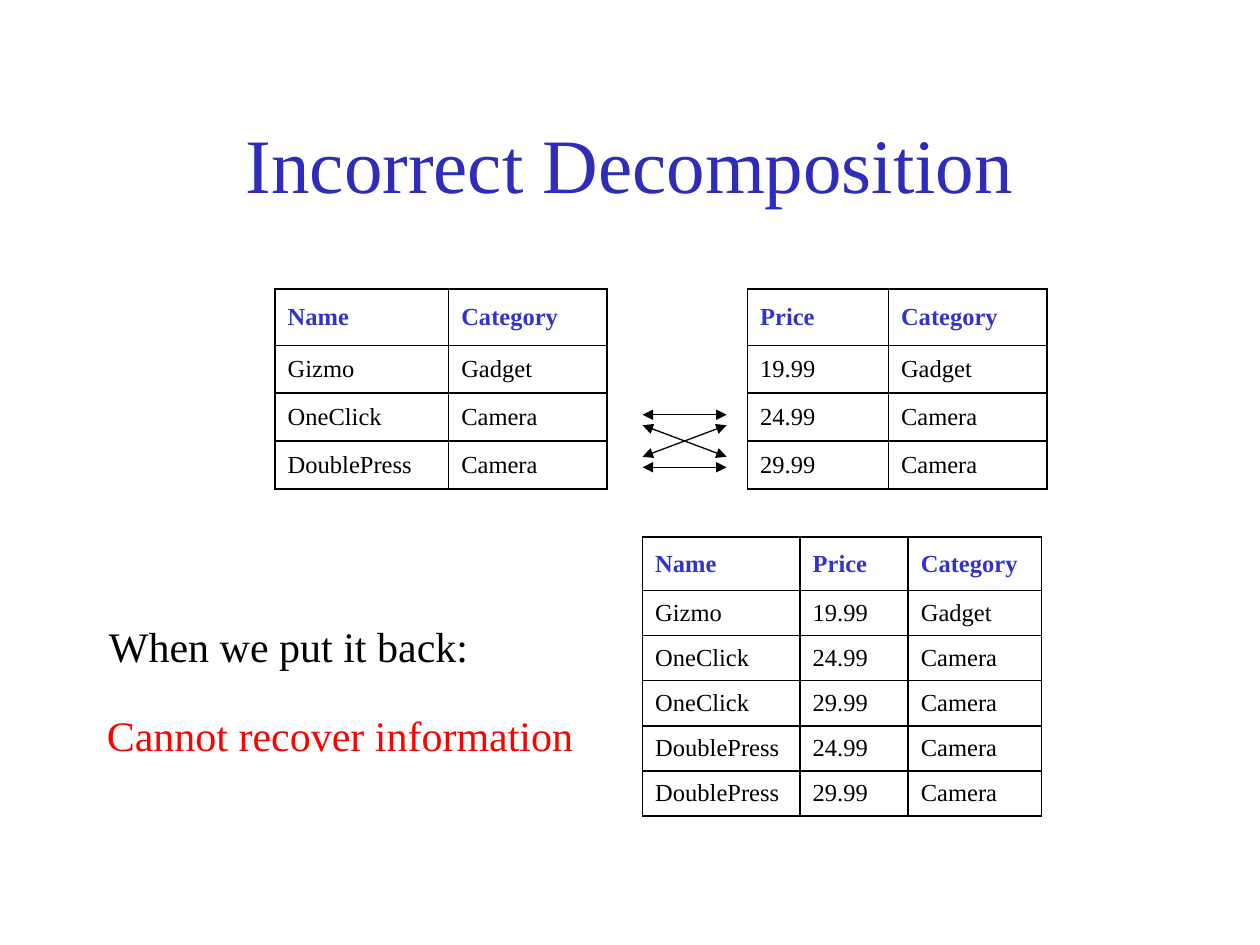
from dataclasses import dataclass

from lxml.etree import SubElement
from pptx import Presentation
from pptx.dml.color import RGBColor
from pptx.enum.shapes import MSO_CONNECTOR
from pptx.enum.text import MSO_ANCHOR, MSO_AUTO_SIZE, PP_ALIGN
from pptx.oxml.ns import qn
from pptx.slide import Slide
from pptx.table import _Cell
from pptx.text.text import _Paragraph
from pptx.util import Pt

FONT = "Times New Roman"
BLACK = RGBColor(0x00, 0x00, 0x00)
RED = RGBColor(0xFF, 0x00, 0x00)
TITLE_BLUE = RGBColor(0x2D, 0x2D, 0xB9)
HEADER_BLUE = RGBColor(0x33, 0x33, 0xCC)


@dataclass(frozen=True)
class Relation:
    left: float
    top: float
    columns: tuple[float, ...]
    header_height: float
    row_height: float
    rows: tuple[tuple[str, ...], ...]


@dataclass(frozen=True)
class Label:
    text: str
    left: float
    top: float
    width: float
    height: float
    size: float
    color: RGBColor
    centered: bool = False


@dataclass(frozen=True)
class Arrow:
    start: float
    end: float


PRODUCTS = (("Gizmo", "Gadget"), ("OneClick", "Camera"), ("DoublePress", "Camera"))
PRICES = (("19.99", "Gadget"), ("24.99", "Camera"), ("29.99", "Camera"))
JOINED = tuple(
    (name, price, category)
    for name, category in PRODUCTS
    for price, price_category in PRICES
    if category == price_category
)

RELATIONS = (
    Relation(157.2, 165, (99.2, 90.5), 32.4, 27.3, (("Name", "Category"), *PRODUCTS)),
    Relation(427.2, 165, (80.5, 90.5), 32.4, 27.3, (("Price", "Category"), *PRICES)),
    Relation(367.2, 307, (90, 61.8, 76.2), 30.4, 25.8,
             (("Name", "Price", "Category"), *JOINED)),
)

ARROW_LEFT, ARROW_RIGHT = 367.2, 415.2
ARROWS = (Arrow(237, 237), Arrow(267, 267), Arrow(261, 243), Arrow(243, 261))

LABELS = (
    Label("Incorrect Decomposition", 54, 48, 612, 90, 44, TITLE_BLUE, True),
    Label("When we put it back:", 55.2, 351, 219.6, 36, 24, BLACK),
    Label("Cannot recover information", 54, 402, 280.8, 36, 24, RED),
)


def add_span(para: _Paragraph, text: str, size: float, color: RGBColor,
             bold: bool = False) -> None:
    span = para.add_run()
    span.text = text
    span.font.name = FONT
    span.font.size = Pt(size)
    span.font.bold = bold
    span.font.color.rgb = color


def add_label(page: Slide, label: Label) -> None:
    box = page.shapes.add_textbox(
        Pt(label.left), Pt(label.top), Pt(label.width), Pt(label.height))
    frame = box.text_frame
    frame.word_wrap = label.centered
    para = frame.paragraphs[0]
    if label.centered:
        frame.vertical_anchor = MSO_ANCHOR.MIDDLE
        para.alignment = PP_ALIGN.CENTER
    else:
        frame.auto_size = MSO_AUTO_SIZE.SHAPE_TO_FIT_TEXT
    add_span(para, label.text, label.size, label.color)


def add_borders(cell: _Cell) -> None:
    properties = cell._tc.get_or_add_tcPr()
    for position, side in enumerate(("lnL", "lnR", "lnT", "lnB")):
        line = SubElement(properties, qn(f"a:{side}"), w=str(Pt(1)))
        fill = SubElement(line, qn("a:solidFill"))
        SubElement(fill, qn("a:srgbClr"), val=str(BLACK))
        properties.insert(position, line)


def add_relation(page: Slide, relation: Relation) -> None:
    body_count = len(relation.rows) - 1
    height = relation.header_height + body_count * relation.row_height
    table = page.shapes.add_table(
        len(relation.rows), len(relation.columns), Pt(relation.left),
        Pt(relation.top), Pt(sum(relation.columns)), Pt(height)).table
    table.first_row = False
    table.horz_banding = False
    for column, width in zip(table.columns, relation.columns):
        column.width = Pt(width)
    for index, values in enumerate(relation.rows):
        header = index == 0
        table.rows[index].height = Pt(
            relation.header_height if header else relation.row_height)
        for column_index, value in enumerate(values):
            cell = table.cell(index, column_index)
            cell.fill.background()
            cell.vertical_anchor = MSO_ANCHOR.MIDDLE
            cell.margin_top = cell.margin_bottom = Pt(3)
            add_borders(cell)
            para = cell.text_frame.paragraphs[0]
            para.space_before = Pt(2.8)
            add_span(para, value, 14, HEADER_BLUE if header else BLACK, header)


def add_arrow(page: Slide, arrow: Arrow) -> None:
    connector = page.shapes.add_connector(
        MSO_CONNECTOR.STRAIGHT, Pt(ARROW_LEFT), Pt(arrow.start),
        Pt(ARROW_RIGHT), Pt(arrow.end))
    connector.line.color.rgb = BLACK
    connector.line.width = Pt(0.75)
    line = connector.line._get_or_add_ln()
    for end in ("headEnd", "tailEnd"):
        SubElement(line, qn(f"a:{end}"), type="triangle")
    SubElement(connector._element.spPr, qn("a:effectLst"))


def main() -> None:
    deck = Presentation()
    deck.slide_width, deck.slide_height = Pt(720), Pt(540)
    page = deck.slides.add_slide(deck.slide_layouts[6])
    for relation in RELATIONS:
        add_relation(page, relation)
    for arrow in ARROWS:
        add_arrow(page, arrow)
    for label in LABELS:
        add_label(page, label)
    deck.save("out.pptx")


if __name__ == "__main__":
    main()
